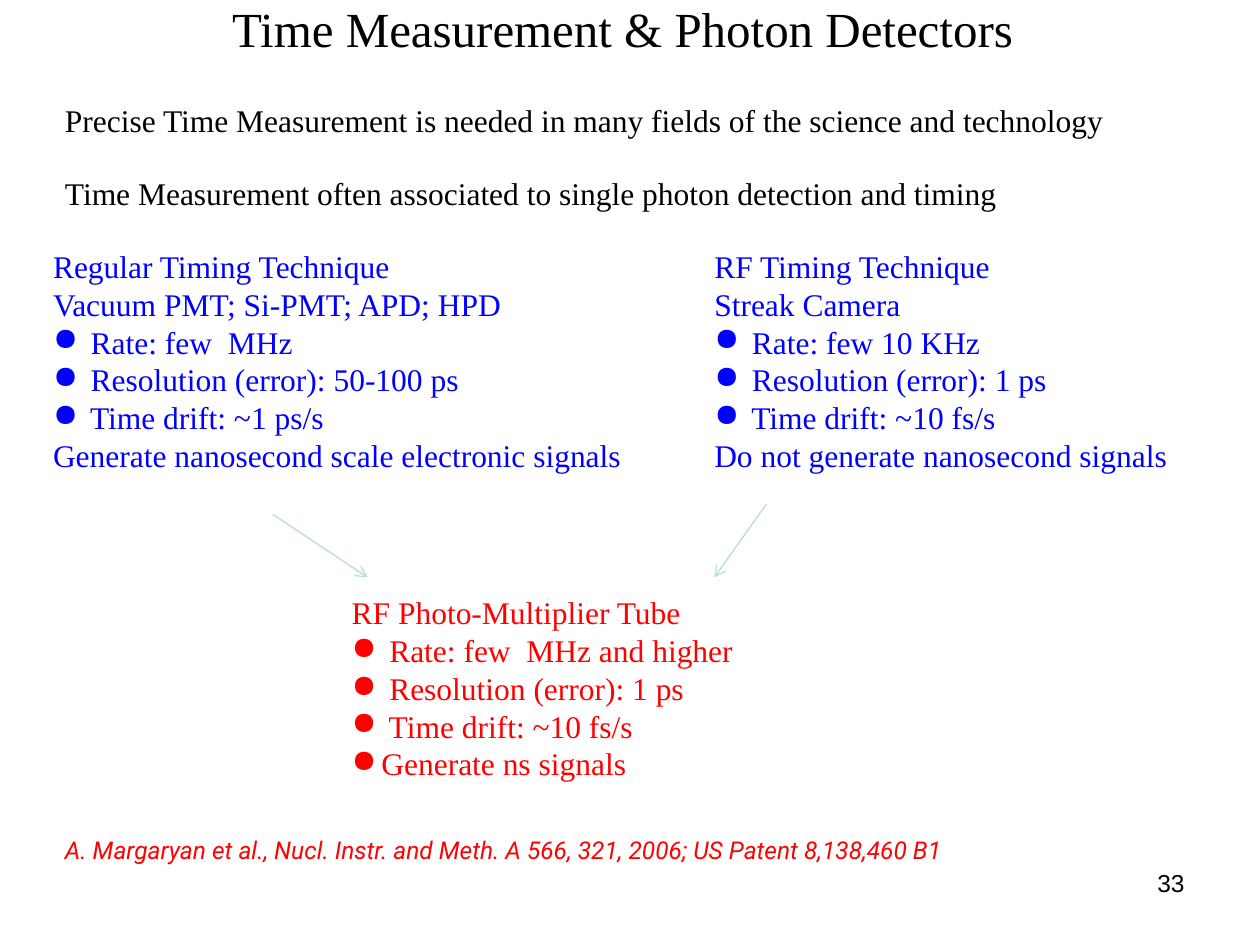
from lxml.etree import SubElement
from pptx import Presentation
from pptx.dml.color import RGBColor
from pptx.enum.shapes import MSO_CONNECTOR as CONN
from pptx.enum.text import MSO_ANCHOR as ANCHOR, PP_ALIGN as ALIGN
from pptx.oxml.ns import qn
from pptx.util import Cm, Pt

SERIF = "Times New Roman"
BLACK, BLUE, RED, PALE = "000000", "0000FF", "FF0000", "B6DCDF"
BULLET = "●"
BULLET_INDENT = 0.6


def rgb(value):
    return RGBColor.from_string(value)


def place(sp, box):
    sp.left, sp.top, sp.width, sp.height = (Cm(v) for v in box)


def write(p, text, font=SERIF, size=18, color=BLACK, italic=False,
          align=ALIGN.LEFT, spacing=None):
    p.alignment = align
    if spacing:
        p.line_spacing = Pt(spacing)
    r = p.add_run()
    r.text = text
    r.font.name, r.font.size, r.font.italic = font, Pt(size), italic
    r.font.color.rgb = rgb(color)


def add_bullet(p):
    pPr = p._p.get_or_add_pPr()
    pPr.set("marL", str(Cm(BULLET_INDENT)))
    pPr.set("indent", str(-Cm(BULLET_INDENT)))
    SubElement(pPr, qn("a:buChar"), char=BULLET)


def text_box(slide, box, inset=(0.25, 0.13)):
    sp = slide.shapes.add_textbox(*(Cm(v) for v in box))
    tf = sp.text_frame
    tf.word_wrap = True
    tf.margin_left = tf.margin_right = Cm(inset[0])
    tf.margin_top = tf.margin_bottom = Cm(inset[1])
    return tf


def add_title(slide, box, text):
    sp = slide.shapes.title
    place(sp, box)
    sp.fill.solid()
    sp.fill.fore_color.rgb = rgb("FFFFFF")
    sp.text_frame.vertical_anchor = ANCHOR.MIDDLE
    write(sp.text_frame.paragraphs[0], text, size=28, align=ALIGN.CENTER)


def add_line(slide, box, text, **fmt):
    write(text_box(slide, box).paragraphs[0], text, **fmt)


def add_technique(slide, box, lines, color):
    """Write a block of lines; those that start with the bullet sign become bullets."""
    tf = text_box(slide, box, inset=(0.23, 0.1))
    for i, line in enumerate(lines):
        p = tf.add_paragraph() if i else tf.paragraphs[0]
        write(p, line.removeprefix(BULLET), color=color, spacing=21.6)
        if line.startswith(BULLET):
            add_bullet(p)


def add_arrow(slide, start, end):
    line = slide.shapes.add_connector(CONN.STRAIGHT, *(Cm(v) for v in start + end))
    line.line.color.rgb = rgb(PALE)
    line.line.width = Pt(0.75)
    SubElement(line.line._get_or_add_ln(), qn("a:tailEnd"), type="arrow")
    SubElement(line._element.spPr, qn("a:effectLst"))


def main():
    prs = Presentation()
    prs.slide_width, prs.slide_height = Cm(25.4), Cm(19.05)
    slide = prs.slides.add_slide(prs.slide_layouts[5])

    add_title(slide, (0.1, 0, 24.9, 1.12), "Time Measurement & Photon Detectors")
    statements = [
        "Precise Time Measurement is needed in many fields of the science and technology",
        "Time Measurement often associated to single photon detection and timing",
    ]
    for i, text in enumerate(statements):
        add_line(slide, (1.06, 1.9 + i * 1.48, 21.9, 1.02), text, spacing=21.6)

    add_technique(slide, (0.84, 4.88, 12.2, 4.65), [
        "Regular Timing Technique",
        "Vacuum PMT; Si-PMT; APD; HPD",
        "● Rate: few  MHz",
        "● Resolution (error): 50-100 ps",
        "● Time drift: ~1 ps/s",
        "Generate nanosecond scale electronic signals",
    ], BLUE)
    add_technique(slide, (14.17, 4.88, 9.9, 4.65), [
        "RF Timing Technique",
        "Streak Camera",
        "● Rate: few 10 KHz",
        "● Resolution (error): 1 ps",
        "● Time drift: ~10 fs/s",
        "Do not generate nanosecond signals",
    ], BLUE)
    add_technique(slide, (6.86, 11.86, 8.46, 4.65), [
        "RF Photo-Multiplier Tube",
        "● Rate: few  MHz and higher",
        "● Resolution (error): 1 ps",
        "● Time drift: ~10 fs/s",
        "●Generate ns signals",
    ], RED)
    add_arrow(slide, (5.5, 10.37), (7.41, 11.64))
    add_arrow(slide, (15.45, 10.16), (14.4, 11.64))

    add_line(slide, (1.06, 16.7, 22, 0.9),
             "A. Margaryan et al., Nucl. Instr. and Meth. A 566, 321, 2006; "
             "US Patent 8,138,460 B1",
             font="Roboto", size=14, color=RED, italic=True)
    add_line(slide, (18.2, 17.36, 5.93, 1.32), "33",
             font="Arial", size=14, align=ALIGN.RIGHT)
    prs.save("out.pptx")


if __name__ == "__main__":
    main()
